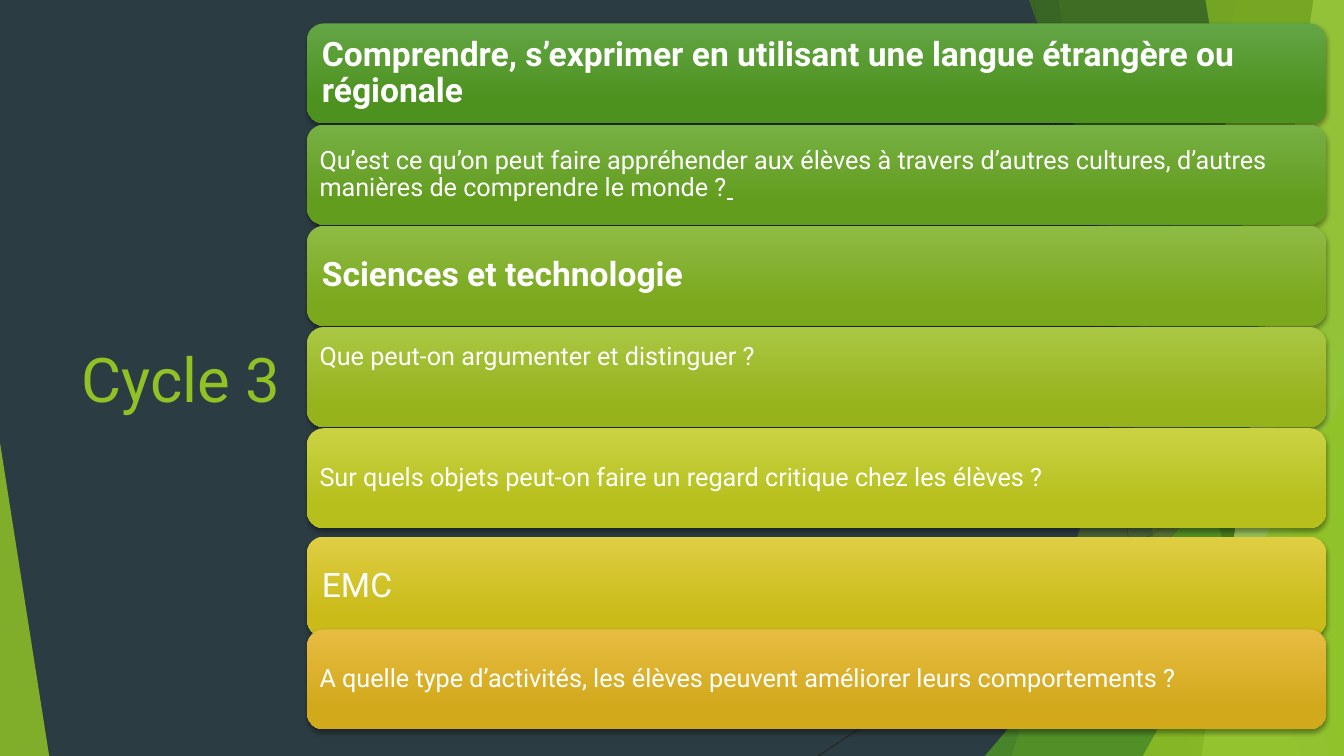
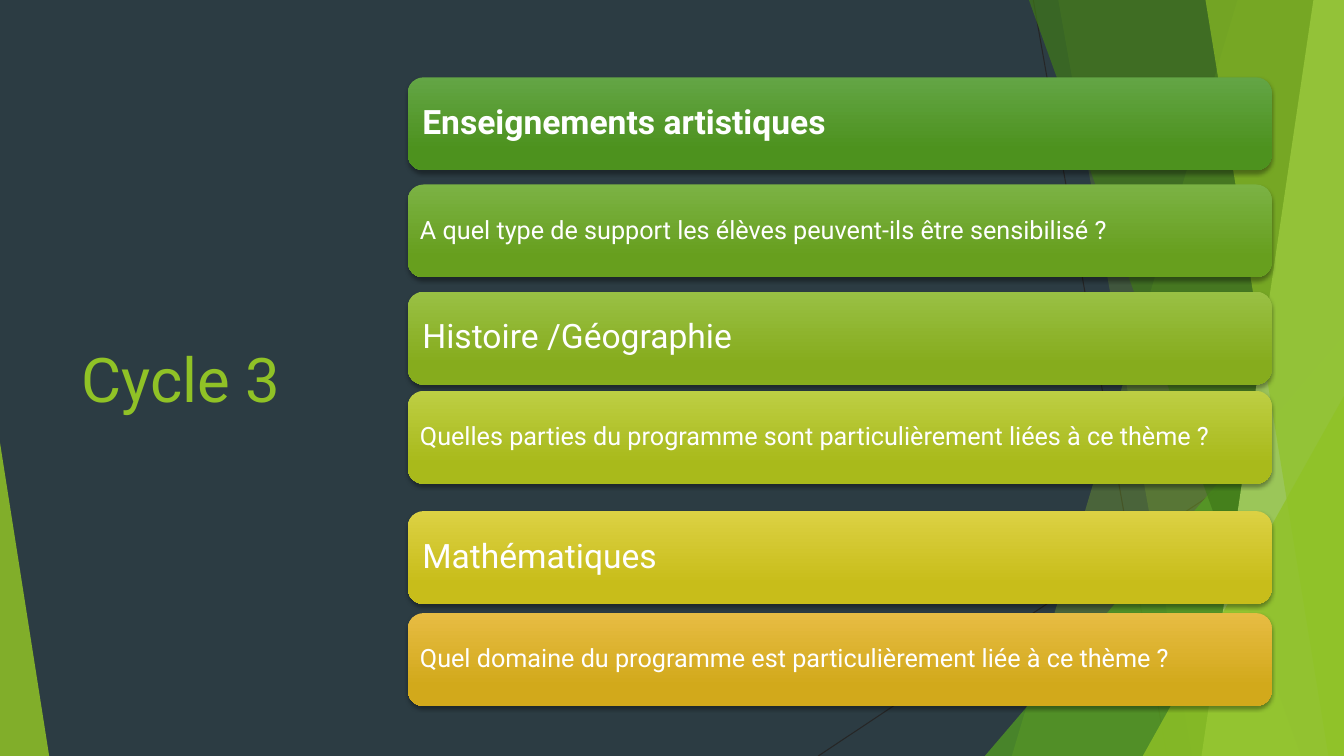
from dataclasses import dataclass
from typing import NamedTuple

from lxml.etree import SubElement
from pptx import Presentation
from pptx.dml.color import RGBColor
from pptx.enum.shapes import MSO_CONNECTOR, MSO_SHAPE
from pptx.enum.text import MSO_ANCHOR, PP_ALIGN
from pptx.oxml.ns import qn
from pptx.util import Cm, Pt


@dataclass(frozen=True)
class Theme:
    width: float = 33.87
    height: float = 19.05
    font: str = "Roboto"
    title_size: int = 44
    heading_size: int = 24
    question_size: int = 18
    background: str = "2C3C43"
    accent: str = "90C226"
    green: str = "54A021"
    dark_green: str = "3F7819"
    pale_green: str = "C0E474"
    rule: str = "262626"
    text: str = "FFFFFF"
    shadow: str = "000000"
    ramp_of_seven: tuple = (
        ("63A545", "4D921E"), ("77B044", "629D1E"), ("8EBB44", "7BA81D"),
        ("AAC744", "97B31C"), ("CAD243", "B6BF1B"), ("DFCE43", "CABB19"),
        ("E7BC43", "D2A91B"),
    )
    ramp_of_six: tuple = (
        ("63A545", "4D921E"), ("7BB244", "679F1E"), ("99C044", "86AC1D"),
        ("BDCE43", "A9BA1B"), ("DCD143", "C8BD1A"), ("E7BC43", "D2A91B"),
    )


THEME = Theme()


class Box(NamedTuple):
    left: float
    top: float
    width: float
    height: float

    def lengths(self):
        return tuple(Cm(value) for value in self)


class Card(NamedTuple):
    text: str
    heading: bool = False
    bold: bool = False
    gap: float | None = None
    lift: float = 0
    underlined_tail: str = ""


def color(code):
    return RGBColor.from_string(code)


def format_run(run, size, code, bold=False):
    run.font.name = THEME.font
    run.font.size = Pt(size)
    run.font.bold = bold
    run.font.color.rgb = color(code)


def fill_translucent(shape, code, opacity):
    shape.shadow.inherit = False
    shape.line.fill.background()
    shape.fill.solid()
    shape.fill.fore_color.rgb = color(code)
    color_element = shape.element.spPr.find(".//" + qn("a:srgbClr"))
    SubElement(color_element, qn("a:alpha"), val=str(opacity * 1000))


def add_rule(slide, start, end):
    points = [Cm(value) for value in (*start, *end)]
    connector = slide.shapes.add_connector(MSO_CONNECTOR.STRAIGHT, *points)
    connector.line.color.rgb = color(THEME.rule)
    connector.line.width = Pt(0.75)
    SubElement(connector.element.spPr, qn("a:effectLst"))


def add_band(slide, top_left, bottom_left, code, opacity):
    builder = slide.shapes.build_freeform(Cm(top_left), 0)
    corners = ((THEME.width, 0), (THEME.width, THEME.height), (bottom_left, THEME.height))
    builder.add_line_segments([(Cm(x), Cm(y)) for x, y in corners])
    fill_translucent(builder.convert_to_shape(), code, opacity)


def add_wedge(slide, left, top, width, apex, code, opacity):
    box = Box(left, top, width, THEME.height - top)
    shape = slide.shapes.add_shape(MSO_SHAPE.ISOSCELES_TRIANGLE, *box.lengths())
    shape.adjustments[0] = apex
    fill_translucent(shape, code, opacity)


def add_backdrop(slide):
    slide.background.fill.solid()
    slide.background.fill.fore_color.rgb = color(THEME.background)
    add_rule(slide, (26.04, 0), (29.41, THEME.height))
    add_rule(slide, (THEME.width, 10.24), (20.62, THEME.height))
    add_band(slide, 31.19, 25.5, THEME.accent, 30)
    add_band(slide, 26.67, 30.05, THEME.accent, 20)
    add_wedge(slide, 24.82, 8.46, 9.05, 1, THEME.green, 72)
    add_band(slide, 25.93, 32.79, THEME.dark_green, 70)
    add_band(slide, 33.1, 30.28, THEME.pale_green, 70)
    add_band(slide, 30.38, 33.48, THEME.accent, 65)
    add_wedge(slide, 28.8, 9.98, 5.07, 1, THEME.accent, 80)
    add_wedge(slide, 0, 11.15, 1.24, 0, THEME.accent, 85)


def add_title(slide, box, text):
    text_frame = slide.shapes.add_textbox(*box.lengths()).text_frame
    text_frame.word_wrap = True
    text_frame.vertical_anchor = MSO_ANCHOR.MIDDLE
    text_frame.text = text
    format_run(text_frame.paragraphs[0].runs[0], THEME.title_size, THEME.accent)


def add_shadow(shape):
    shape.shadow.inherit = False
    effects = shape.element.spPr.find(qn("a:effectLst"))
    shadow = SubElement(
        effects, qn("a:outerShdw"), blurRad=str(Pt(3)), dist=str(Pt(2)),
        dir="5400000", rotWithShape="0",
    )
    shadow_color = SubElement(shadow, qn("a:srgbClr"), val=THEME.shadow)
    SubElement(shadow_color, qn("a:alpha"), val="35000")


def fill_gradient(shape, codes):
    shape.fill.gradient()
    shape.fill.gradient_angle = 270
    for stop, code, position in zip(shape.fill.gradient_stops, codes, (0, 0.78)):
        stop.color.rgb = color(code)
        stop.position = position


def add_card(slide, box, card, codes):
    shape = slide.shapes.add_shape(MSO_SHAPE.ROUNDED_RECTANGLE, *box.lengths())
    shape.line.fill.background()
    fill_gradient(shape, codes)
    add_shadow(shape)

    inset = 0.25 if card.heading else 0.19
    text_frame = shape.text_frame
    text_frame.word_wrap = True
    text_frame.vertical_anchor = MSO_ANCHOR.MIDDLE
    text_frame.margin_left = text_frame.margin_right = text_frame.margin_top = Cm(inset)
    text_frame.margin_bottom = Cm(inset + 2 * card.lift)
    text_frame.text = card.text
    paragraph = text_frame.paragraphs[0]
    paragraph.alignment = PP_ALIGN.LEFT
    paragraph.line_spacing = 0.9
    if card.underlined_tail:
        tail = paragraph.add_run()
        tail.text = card.underlined_tail
        tail.font.underline = True
    size = THEME.heading_size if card.heading else THEME.question_size
    for run in paragraph.runs:
        format_run(run, size, THEME.text, card.bold)


def add_card_stack(slide, first_box, gap, cards, ramp):
    box = first_box
    for index, (card, codes) in enumerate(zip(cards, ramp)):
        if index:
            step = gap if card.gap is None else card.gap
            box = box._replace(top=box.top + box.height + step)
        add_card(slide, box, card, codes)


def add_cycle_slide(presentation, title_width, first_box, gap, cards, ramp):
    slide = presentation.slides.add_slide(presentation.slide_layouts[6])
    add_backdrop(slide)
    add_title(slide, Box(1.8, 3.84, title_width, 11.38), "Cycle 3")
    add_card_stack(slide, first_box, gap, cards, ramp)


LANGUAGE_AND_SCIENCE = (
    Card("Comprendre, s’exprimer en utilisant une langue étrangère ou régionale",
         heading=True, bold=True),
    Card("Qu’est ce qu’on peut faire appréhender aux élèves à travers d’autres cultures, "
         "d’autres manières de comprendre le monde ?", underlined_tail=" "),
    Card("Sciences et technologie", heading=True, bold=True),
    Card("Que peut-on argumenter et distinguer ?", lift=0.5),
    Card("Sur quels objets peut-on faire un regard critique chez les élèves ?"),
    Card("EMC", heading=True, gap=0.21),
    Card("A quelle type d’activités, les élèves peuvent améliorer leurs comportements ?",
         gap=-0.18),
)

ARTS_HISTORY_AND_MATHS = (
    Card("Enseignements artistiques", heading=True, bold=True),
    Card("A quel type de support les élèves peuvent-ils être sensibilisé ?"),
    Card("Histoire /Géographie", heading=True),
    Card("Quelles parties du programme sont particulièrement liées à ce thème ?", gap=0.16),
    Card("Mathématiques", heading=True, gap=0.69),
    Card("Quel domaine du programme est particulièrement liée à ce thème ?", gap=0.23),
)


def main():
    presentation = Presentation()
    presentation.slide_width = Cm(THEME.width)
    presentation.slide_height = Cm(THEME.height)
    add_cycle_slide(presentation, 5.92, Box(7.74, 0.59, 25.68, 2.52), 0.03,
                    LANGUAGE_AND_SCIENCE, THEME.ramp_of_seven)
    add_cycle_slide(presentation, 9.86, Box(10.28, 1.95, 21.77, 2.34), 0.36,
                    ARTS_HISTORY_AND_MATHS, THEME.ramp_of_six)
    presentation.save("out.pptx")


if __name__ == "__main__":
    main()
